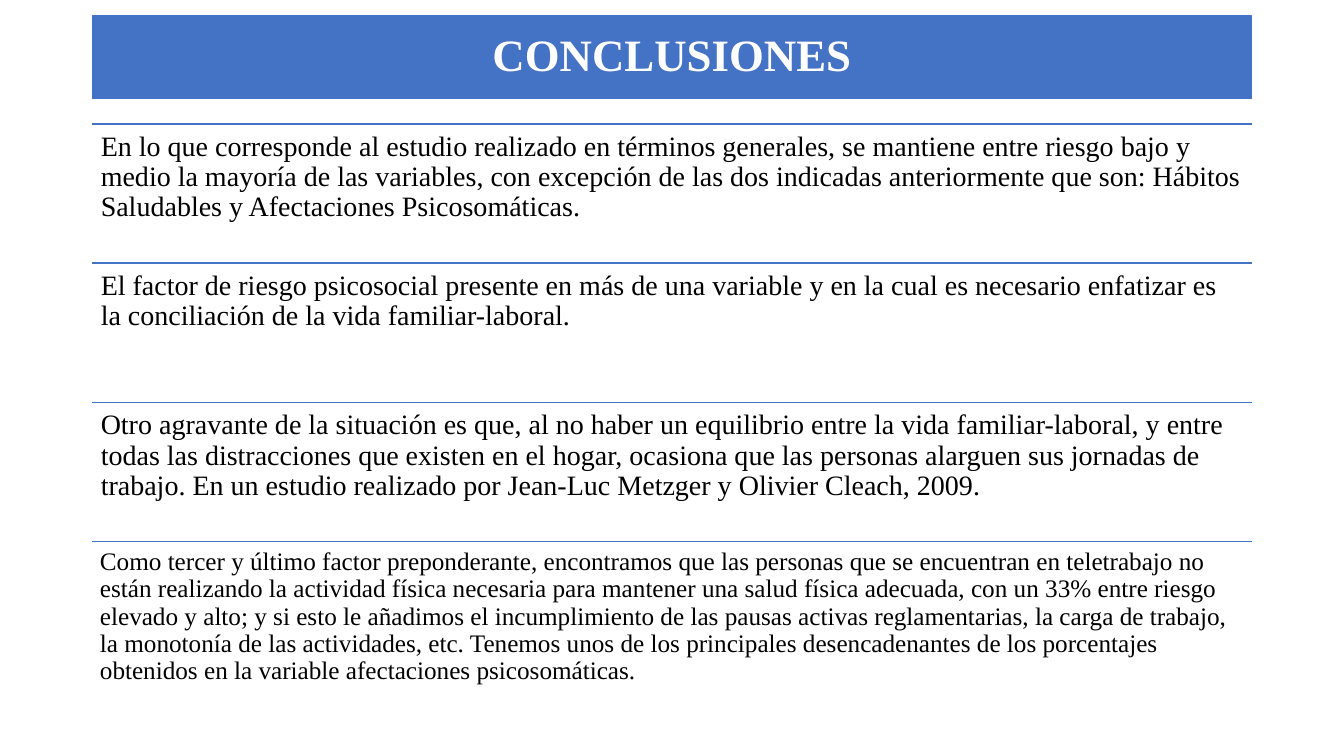
import pptx
import pptx.util
import pptx.dml.color
import pptx.enum.shapes
import pptx.enum.text
import pptx.oxml.ns
import lxml.etree

Pt = pptx.util.Pt
FONT = "Times New Roman"
BLUE, BLACK, WHITE = "4472C4", "000000", "FFFFFF"

# Content: text, size, inset
TITLE = "CONCLUSIONES"
ITEMS = [
    ("En lo que corresponde al estudio realizado en términos generales, se mantiene entre riesgo bajo y medio la mayoría de las variables, con excepción de las dos indicadas anteriormente que son: Hábitos Saludables y Afectaciones Psicosomáticas.", 20, 6),
    ("El factor de riesgo psicosocial presente en más de una variable y en la cual es necesario enfatizar es la conciliación de la vida familiar-laboral.", 20, 6),
    ("Otro agravante de la situación es que, al no haber un equilibrio entre la vida familiar-laboral, y entre todas las distracciones que existen en el hogar, ocasiona que las personas alarguen sus jornadas de trabajo. En un estudio realizado por Jean-Luc Metzger y Olivier Cleach, 2009.", 20, 6),
    ("Como tercer y último factor preponderante, encontramos que las personas que se encuentran en teletrabajo no están realizando la actividad física necesaria para mantener una salud física adecuada, con un 33% entre riesgo elevado y alto; y si esto le añadimos el incumplimiento de las pausas activas reglamentarias, la carga de trabajo, la monotonía de las actividades, etc. Tenemos unos de los principales desencadenantes de los porcentajes obtenidos en la variable afectaciones psicosomáticas.", 18, 5.4),
]

# Layout
LEFT, WIDTH = 66, 828
TOP, STEP = 88.5, 99.4


def color(code):
    return pptx.dml.color.RGBColor.from_string(code)


def write(frame, text, size, code, bold=False):
    frame.text = text
    frame.word_wrap = True
    par = frame.paragraphs[0]
    par.line_spacing = 0.9
    font = par.runs[0].font
    font.name, font.size, font.bold = FONT, Pt(size), bold
    font.color.rgb = color(code)
    return par


def rule(slide, top):
    kind = pptx.enum.shapes.MSO_CONNECTOR.STRAIGHT
    line = slide.shapes.add_connector(kind, Pt(LEFT), Pt(top), Pt(LEFT + WIDTH), Pt(top))
    line.line.color.rgb = color(BLUE)
    line.line.width = Pt(1)
    lxml.etree.SubElement(line._element.spPr, pptx.oxml.ns.qn("a:effectLst"))


def block(slide, top, text, size, inset):
    box = slide.shapes.add_textbox(Pt(LEFT), Pt(top), Pt(WIDTH), Pt(STEP))
    frame = box.text_frame
    frame.margin_left = frame.margin_right = Pt(inset)
    frame.margin_top = frame.margin_bottom = Pt(inset)
    par = write(frame, text, size, BLACK)
    par.space_after = Pt(size * 0.35)


def main():
    deck = pptx.Presentation()
    deck.slide_width, deck.slide_height = Pt(960), Pt(540)
    slide = deck.slides.add_slide(deck.slide_layouts[5])

    # Title bar
    head = slide.shapes.title
    head.left, head.top, head.width, head.height = Pt(LEFT), Pt(11.5), Pt(WIDTH), Pt(59)
    head.fill.solid()
    head.fill.fore_color.rgb = color(BLUE)
    head.line.color.rgb = color(BLUE)
    head.line.width = Pt(1)
    par = write(head.text_frame, TITLE, 32, WHITE, True)
    par.alignment = pptx.enum.text.PP_ALIGN.CENTER
    head.text_frame.vertical_anchor = pptx.enum.text.MSO_ANCHOR.MIDDLE

    # Ruled conclusions
    for row, item in enumerate(ITEMS):
        top = TOP + row * STEP
        rule(slide, top)
        block(slide, top, *item)

    deck.save("out.pptx")


if __name__ == "__main__":
    main()
